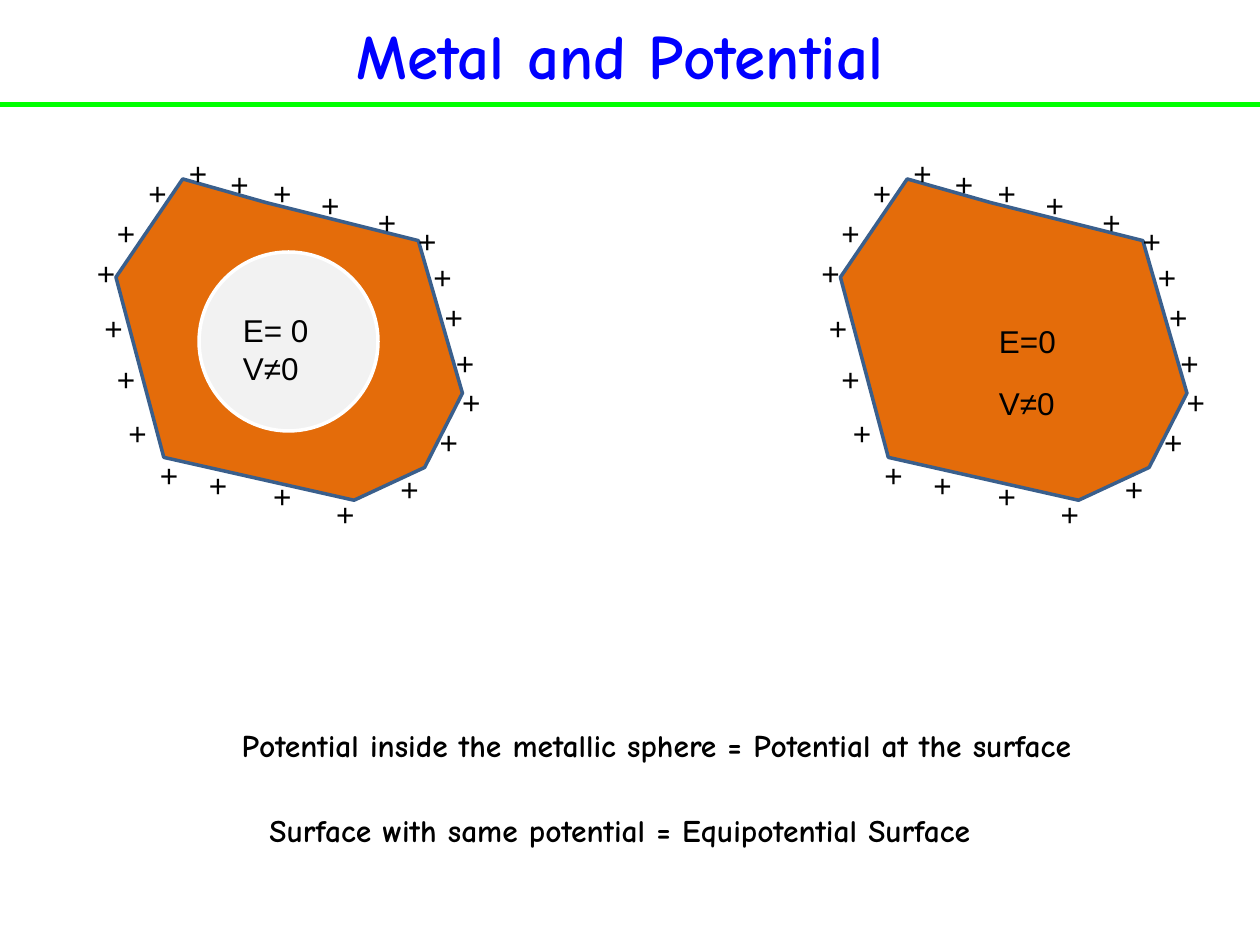
from dataclasses import dataclass

import pptx
import pptx.dml.color
import pptx.enum.shapes
import pptx.enum.text
import pptx.oxml.ns
import pptx.util
from lxml import etree

ALIGN = pptx.enum.text.PP_ALIGN
FIT = pptx.enum.text.MSO_AUTO_SIZE
COLUMNS, ROWS = 100, 75


@dataclass(frozen=True)
class Theme:
    title_font: str = "Comic Neue"
    label_font: str = "Arial"
    title_size: int = 36
    text_size: int = 18
    title: str = "0000FF"
    text: str = "000000"
    rule: str = "00FF00"
    metal: str = "E46C0A"
    metal_edge: str = "3A5F8C"
    cavity: str = "F2F2F2"
    cavity_edge: str = "FFFFFF"
    rule_width: int = 3
    edge_width: int = 2


def rgb(value):
    return pptx.dml.color.RGBColor.from_string(value)


def write_text(shape, *lines, font, size, color, bold=False,
               align=ALIGN.LEFT, spacing=None, wrap=False, fit=FIT.SHAPE_TO_FIT_TEXT):
    """Fill a shape with one paragraph per line, all in the same format."""
    frame = shape.text_frame
    frame.text = "\n".join(lines)
    frame.word_wrap = wrap
    frame.auto_size = fit
    frame.vertical_anchor = pptx.enum.text.MSO_ANCHOR.TOP
    for paragraph in frame.paragraphs:
        paragraph.alignment = align
        paragraph.line_spacing = spacing
        for run in paragraph.runs:
            run.font.name = font
            run.font.size = pptx.util.Pt(size)
            run.font.bold = bold
            run.font.color.rgb = rgb(color)


class SlideBuilder:
    """Draws on one slide; lengths are columns and rows of its grid."""

    def __init__(self, presentation, theme):
        self.theme = theme
        self.column = presentation.slide_width // COLUMNS
        self.row = presentation.slide_height // ROWS
        self.slide = presentation.slides.add_slide(presentation.slide_layouts[5])

    def place(self, left, top, width, height):
        return (round(left * self.column), round(top * self.row),
                round(width * self.column), round(height * self.row))

    def paint(self, shape, fill, edge):
        shape.shadow.inherit = False
        shape.fill.solid()
        shape.fill.fore_color.rgb = rgb(fill)
        shape.line.color.rgb = rgb(edge)
        shape.line.width = pptx.util.Pt(self.theme.edge_width)

    def title(self, text, *box):
        shape = self.slide.shapes.title
        shape.left, shape.top, shape.width, shape.height = self.place(*box)
        write_text(shape, text, font=self.theme.title_font, size=self.theme.title_size,
                   color=self.theme.title, bold=True, align=ALIGN.CENTER,
                   wrap=True, fit=FIT.NONE)

    def rule(self, row):
        """Draw a line across the whole slide."""
        line = self.slide.shapes.add_connector(
            pptx.enum.shapes.MSO_CONNECTOR.STRAIGHT,
            0, round(row * self.row), COLUMNS * self.column, round(row * self.row))
        line.line.color.rgb = rgb(self.theme.rule)
        line.line.width = pptx.util.Pt(self.theme.rule_width)
        etree.SubElement(line._element.spPr, pptx.oxml.ns.qn("a:effectLst"))

    def statement(self, text, *box, wrap=False):
        shape = self.slide.shapes.add_textbox(*self.place(*box))
        write_text(shape, text, font=self.theme.title_font, size=self.theme.text_size,
                   color=self.theme.text, bold=True, align=ALIGN.CENTER,
                   spacing=0.9, wrap=wrap)

    def group(self):
        return self.slide.shapes.add_group_shape()

    def label(self, group, *lines, box):
        shape = group.shapes.add_textbox(*self.place(*box))
        write_text(shape, *lines, font=self.theme.label_font,
                   size=self.theme.text_size, color=self.theme.text)

    def polygon(self, group, points):
        corners = [self.place(x, y, 0, 0)[:2] for x, y in points]
        builder = group.shapes.build_freeform(*corners[0])
        builder.add_line_segments(corners[1:], close=True)
        self.paint(builder.convert_to_shape(), self.theme.metal, self.theme.metal_edge)

    def circle(self, group, left, top, diameter):
        shape = group.shapes.add_shape(
            pptx.enum.shapes.MSO_SHAPE.OVAL, *self.place(left, top, diameter, diameter))
        self.paint(shape, self.theme.cavity, self.theme.cavity_edge)


# Offsets from the top left corner of a conductor, clockwise.
OUTLINE = [(18.9, 25.5), (24.5, 22.9), (27.5, 17), (24, 4.9),
           (12, 1.9), (5.3, 0), (0, 7.8), (3.8, 22.1)]
CHARGES = [(4.8, -2.5), (8.1, -1.6), (11.5, -0.9), (15.3, 0.1), (19.8, 1.4),
           (23, 2.9), (24.2, 5.8), (25.1, 9), (26, 12.6), (26.5, 15.7),
           (24.7, 18.9), (21.6, 22.6), (16.5, 24.6), (11.5, 23.2), (6.4, 22.3),
           (2.5, 21.5), (0, 18.2), (-0.9, 13.9), (-1.9, 9.8), (-2.5, 5.5),
           (-0.9, 2.3), (1.6, -0.9)]
CONDUCTOR_TOP = 14.2
SOLID_LEFT, HOLLOW_LEFT = 66.7, 9.2


def charged_conductor(builder, left):
    """Draw the metal body ringed by plus signs and return its group."""
    group = builder.group()
    builder.polygon(group, [(left + x, CONDUCTOR_TOP + y) for x, y in OUTLINE])
    for x, y in CHARGES:
        builder.label(group, "+", box=(left + x, CONDUCTOR_TOP + y, 3.5, 4))
    return group


def main():
    presentation = pptx.Presentation()
    presentation.slide_width = pptx.util.Inches(10)
    presentation.slide_height = pptx.util.Inches(7.5)
    builder = SlideBuilder(presentation, Theme())

    builder.rule(8.3)
    builder.title("Metal and Potential", 4.2, 0.8, 90, 11.2)

    solid = charged_conductor(builder, SOLID_LEFT)
    builder.label(solid, "E=0", box=(78.3, 25.1, 6.6, 4))
    builder.label(solid, "V≠0", box=(78.3, 30, 6.5, 4))

    builder.statement("Potential inside the metallic sphere = Potential at the surface",
                      4.2, 57.5, 95.8, 3.7, wrap=True)
    builder.statement("Surface with same potential = Equipotential Surface",
                      15.9, 64.2, 66.6, 3.7)

    hollow = charged_conductor(builder, HOLLOW_LEFT)
    builder.circle(hollow, 15.8, 20, 14.2)
    builder.label(hollow, "E= 0", "V≠0", box=(18.3, 24.2, 7.3, 7.1))

    presentation.save("out.pptx")


if __name__ == "__main__":
    main()
